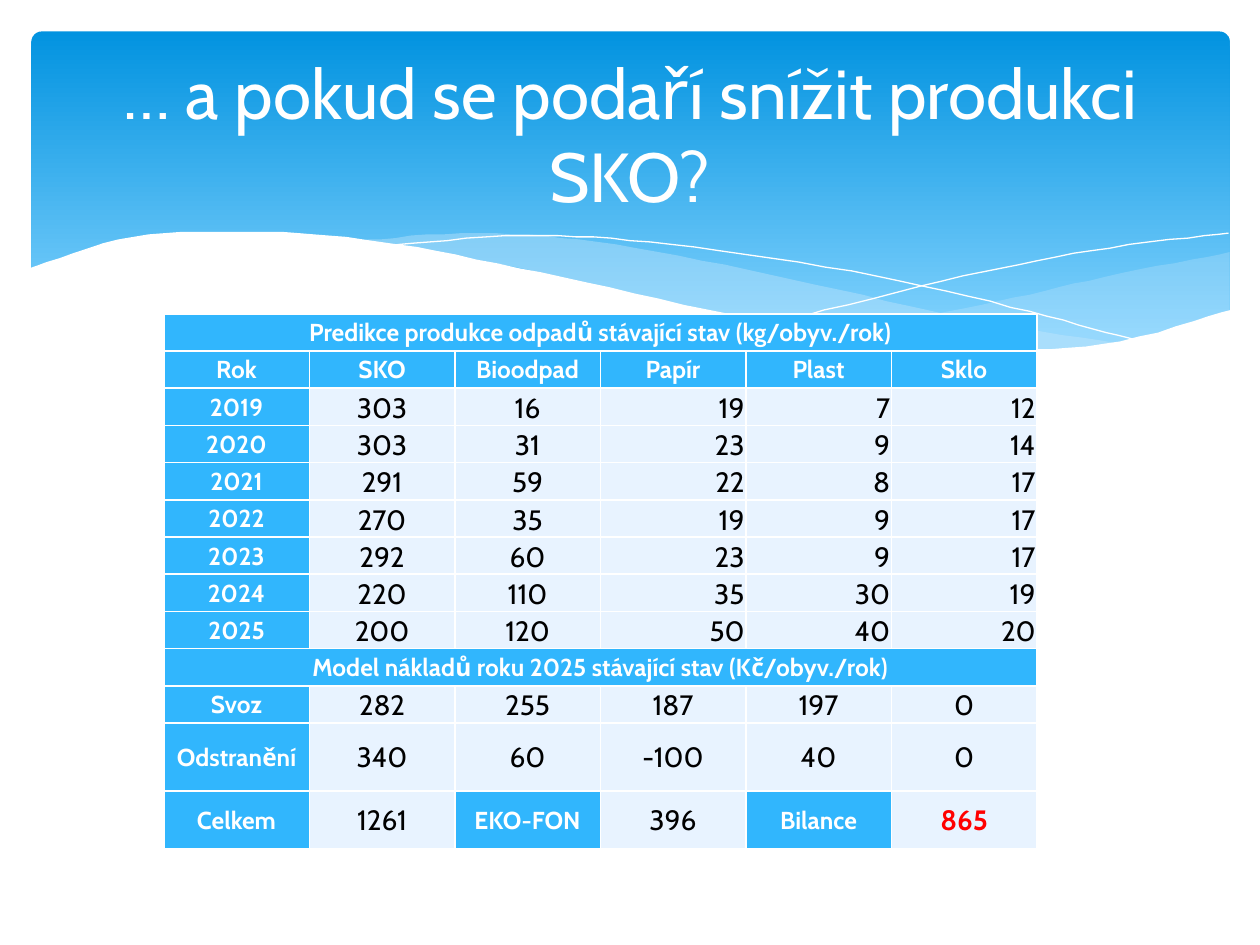
"""Build a slide with a wave banner and a table of waste forecasts and costs."""
from lxml import etree
from pptx import Presentation
from pptx import util as u
from pptx.dml.color import RGBColor
from pptx.enum import shapes, text
from pptx.oxml import ns

PX = 9144
STEPS = 8
HUES = {"top": "0293E0", "low": "83D3FE", "mist": "C6E7FC", "head": "31B6FD",
        "body": "E8F3FF", "white": "FFFFFF", "black": "000000", "red": "FF0000"}
MID, END = text.PP_ALIGN.CENTER, text.PP_ALIGN.RIGHT


def write(frame, words, size=14, color="white", bold=False, align=MID):
    para = frame.paragraphs[0]
    para.alignment = align
    run = para.add_run()
    run.text = words
    run.font.name = "Cabin"
    run.font.size = u.Pt(size)
    run.font.bold = bold
    run.font.color.rgb = RGBColor.from_string(HUES[color])


def curve(knots):
    """Return points of a Catmull-Rom spline through the knots."""
    ends = [knots[0], *knots, knots[-1]]
    dots = [knots[0]]
    for quad in zip(ends, ends[1:], ends[2:], ends[3:]):
        for step in range(1, STEPS + 1):
            t = step / STEPS
            dots.append(tuple(
                b + t * (c - a + t * (2 * a - 5 * b + 4 * c - d + t * (3 * b - a - 3 * c + d))) / 2
                for a, b, c, d in zip(*quad)))
    return dots


deck = Presentation()
deck.slide_width, deck.slide_height = 1000 * PX, 750 * PX
slide = deck.slides.add_slide(deck.slide_layouts[5])
tree = slide.shapes

banner = tree.add_shape(shapes.MSO_SHAPE.ROUNDED_RECTANGLE, 25 * PX, 25 * PX, 951 * PX, 270 * PX)
banner.adjustments[0] = 0.03
banner.shadow.inherit = False
banner.line.fill.background()
banner.fill.gradient()
banner.fill.gradient_angle = 270
for stop, (name, place) in zip(banner.fill.gradient_stops, [("top", 0), ("low", 0.9)]):
    stop.color.rgb = RGBColor.from_string(HUES[name])
    stop.position = place

waves = [
    ("mist", 29, [[(661, 265), (779, 242), (876, 220), (976, 200)],
                  [(976, 247), (897, 270), (803, 278), (661, 265)]]),
    ("mist", 40, [[(286, 191), (380, 185), (489, 194), (629, 222), (775, 254), (893, 273)],
                  [(893, 273), (807, 278), (680, 268), (530, 240), (404, 211), (286, 191)]]),
    (None, 0, [[(309, 195), (416, 187), (533, 194), (695, 219), (831, 251), (907, 272)]]),
    (None, 0, [[(613, 257), (748, 223), (866, 199), (975, 185)]]),
    ("white", 100, [[(23, 213), (106, 188), (211, 184), (316, 194), (447, 220),
                     (603, 254), (761, 275), (875, 273), (977, 246)],
                    [(977, 329), (23, 329)]]),
]
for name, alpha, sides in waves:
    start, *rest = [dot for side in sides for dot in curve(side)]
    pen = tree.build_freeform(*start, scale=PX)
    pen.add_line_segments(rest, close=name is not None)
    wave = pen.convert_to_shape()
    wave.shadow.inherit = False
    if name:
        wave.line.fill.background()
        wave.fill.solid()
        wave.fill.fore_color.rgb = RGBColor.from_string(HUES[name])
        tint = wave._element.spPr.find(".//" + ns.qn("a:srgbClr"))
        etree.SubElement(tint, ns.qn("a:alpha"), val=str(alpha * 1000))
    else:
        wave.fill.background()
        wave.line.color.rgb = RGBColor.from_string(HUES["white"])
        wave.line.width = u.Pt(0)

title = tree.title
tree._spTree.append(title._element)
title.left, title.top, title.width, title.height = 50 * PX, 37 * PX, 900 * PX, 137 * PX
title.text_frame.vertical_anchor = text.MSO_ANCHOR.MIDDLE
write(title.text_frame, "… a pokud se podaří snížit produkci SKO?", size=39.6)

rows = [
    ["Predikce produkce odpadů stávající stav (kg/obyv./rok)"],
    "Rok SKO Bioodpad Papír Plast Sklo".split(),
    "2019 303 16 19 7 12".split(),
    "2020 303 31 23 9 14".split(),
    "2021 291 59 22 8 17".split(),
    "2022 270 35 19 9 17".split(),
    "2023 292 60 23 9 17".split(),
    "2024 220 110 35 30 19".split(),
    "2025 200 120 50 40 20".split(),
    ["Model nákladů roku 2025 stávající stav (Kč/obyv./rok)"],
    "Svoz 282 255 187 197 0".split(),
    "Odstranění 340 60 -100 40 0".split(),
    "Celkem 1261 EKO-FON 396 Bilance 865".split(),
]
grid = tree.add_table(len(rows), 6, 130 * PX, 249 * PX, 693 * PX, 425 * PX).table
for r, row in enumerate(rows):
    grid.rows[r].height = {11: 54 * PX, 12: 46 * PX}.get(r, 325 * PX // 11)
    if len(row) == 1:
        grid.cell(r, 0).merge(grid.cell(r, 5))
    for c in range(6):
        cell = grid.cell(r, c)
        for side in ("lnL", "lnR", "lnT", "lnB"):
            edge = etree.SubElement(cell._tc.get_or_add_tcPr(), ns.qn("a:" + side), w="12700")
            paint = etree.SubElement(edge, ns.qn("a:solidFill"))
            etree.SubElement(paint, ns.qn("a:srgbClr"), val=HUES["white"])
        label = c == 0 or r in (0, 1, 9) or (r == 12 and c in (2, 4))
        cell.fill.solid()
        cell.fill.fore_color.rgb = RGBColor.from_string(HUES["head" if label else "body"])
        cell.margin_left = cell.margin_right = cell.margin_top = PX
        cell.margin_bottom = 0
        year = 2 <= r <= 8
        low = year and not label
        cell.vertical_anchor = text.MSO_ANCHOR.BOTTOM if low else text.MSO_ANCHOR.MIDDLE
        if c < len(row):
            total = (r, c) == (12, 5)
            color = "white" if label else "red" if total else "black"
            write(cell.text_frame, row[c], size=14 if label else 16, color=color,
                  bold=label or total, align=END if year and c > 2 else MID)

deck.save("out.pptx")
